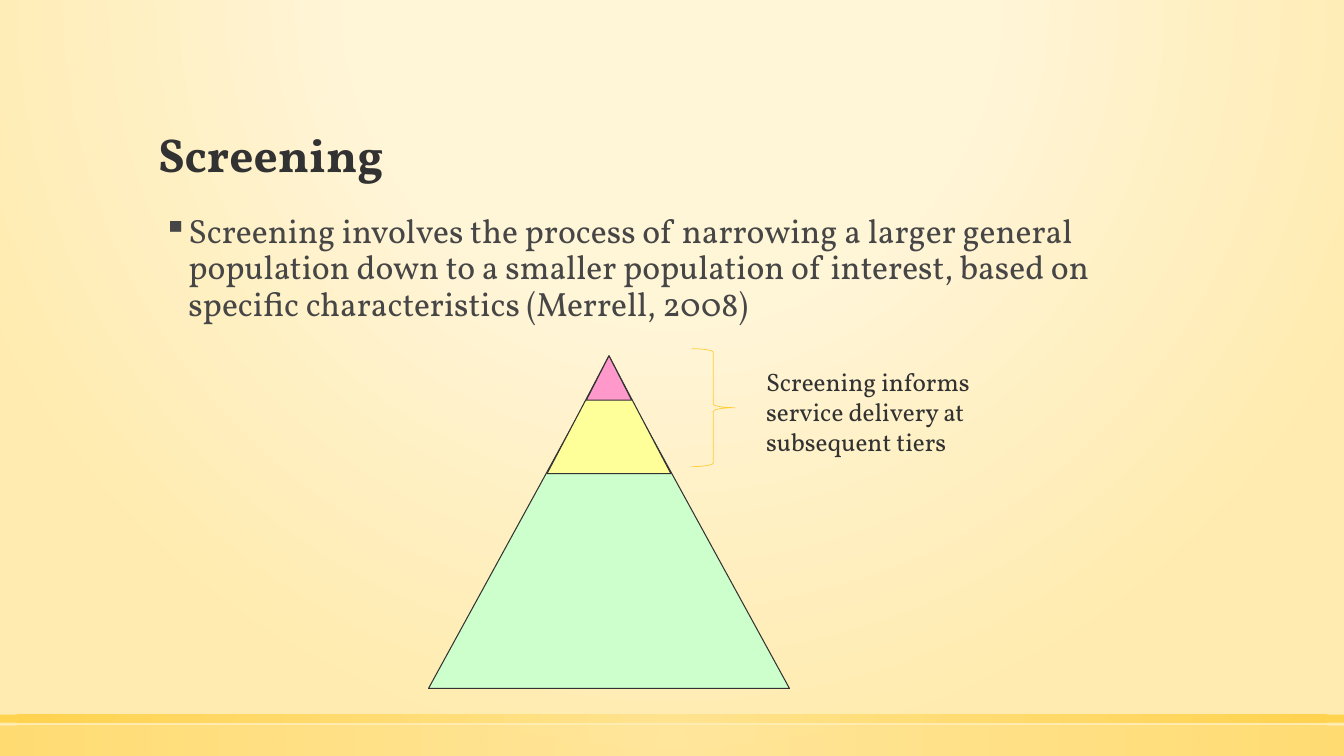
from dataclasses import dataclass, field

from lxml import etree
from pptx import Presentation
from pptx.dml import color as dml
from pptx.enum import shapes, text
from pptx.oxml import ns, parse_xml
from pptx.util import Inches, Pt

COLOURS = {
    "ink": "323232", "body": "464646", "gold": "FFCD36", "light gold": "FFE186",
    "cream": "FFF5D7", "sand": "FFEBAF",
    "green": "CCFFCC", "yellow": "FFFF99", "pink": "FF99CC",
}
FONT = "Vollkorn"
SLIDE_WIDTH, SLIDE_HEIGHT = 13.33, 7.5
PYRAMID_CENTRE = 6.04


@dataclass
class Stop:
    position: int
    colour: str
    alpha: int = 100


@dataclass
class Band:
    top: float
    height: float
    alpha: int


@dataclass
class Tier:
    top: float
    width: float
    height: float
    colour: str


@dataclass
class Label:
    words: str
    left: float
    top: float
    width: float
    height: float
    size: int
    colour: str = "ink"
    bold: bool = False
    bullet: str = ""
    frame_format: dict = field(default_factory=dict)
    para_format: dict = field(default_factory=dict)


BANDS = [Band(7.2, 0.3, 50), Band(7.09, 0.08, 80)]
TIERS = [
    Tier(3.56, 3.58, 3.27, "green"),
    Tier(3.53, 1.23, 1.17, "yellow"),
    Tier(3.53, 0.45, 0.44, "pink"),
]
LABELS = [
    Label("Screening", 1.47, 0.51, 10.4, 1.35, 34, bold=True,
          frame_format={"vertical_anchor": text.MSO_ANCHOR.BOTTOM},
          para_format={"line_spacing": 0.9}),
    Label("Screening involves the process of narrowing a larger general population "
          "down to a smaller population of interest, based on specific "
          "characteristics (Merrell, 2008)",
          1.47, 2.08, 10.4, 4.51, 24, "body", bullet="▪",
          para_format={"line_spacing": 0.9, "space_before": Pt(18)}),
    Label("Screening informs service delivery at subsequent tiers",
          7.5, 3.58, 2.5, 1.01, 18,
          frame_format={"auto_size": text.MSO_AUTO_SIZE.SHAPE_TO_FIT_TEXT}),
]


def rgb(name: str) -> dml.RGBColor:
    return dml.RGBColor.from_string(COLOURS[name])


def apply(target, values: dict) -> None:
    for name, value in values.items():
        setattr(target, name, value)


def paint_radial(fill, holder, stops: list[Stop], top: int, bottom: int) -> None:
    """Fill with a circular gradient whose focus is set by top and bottom percent."""
    fill.solid()
    stop_xml = "".join(
        f'<a:gs pos="{stop.position * 1000}"><a:srgbClr val="{COLOURS[stop.colour]}">'
        f'<a:alpha val="{stop.alpha * 1000}"/></a:srgbClr></a:gs>'
        for stop in stops
    )
    gradient = parse_xml(
        f'<a:gradFill {ns.nsdecls("a")} rotWithShape="1"><a:gsLst>{stop_xml}</a:gsLst>'
        f'<a:path path="circle"><a:fillToRect l="50000" t="{top * 1000}" r="50000" '
        f'b="{bottom * 1000}"/></a:path></a:gradFill>'
    )
    solid = holder.xpath(".//a:solidFill")[0]
    solid.getparent().replace(solid, gradient)


def add_plain_shape(page, kind, left: float, top: float, width: float, height: float):
    shape = page.shapes.add_shape(
        kind, Inches(left), Inches(top), Inches(width), Inches(height))
    shape.shadow.inherit = False
    return shape


def outline(shape, colour: str, points: float) -> None:
    shape.line.color.rgb = rgb(colour)
    shape.line.width = Pt(points)


def draw_band(page, band: Band) -> None:
    bar = add_plain_shape(page, shapes.MSO_SHAPE.RECTANGLE,
                          0, band.top, SLIDE_WIDTH, band.height)
    bar.line.fill.background()
    stops = [Stop(0, "light gold", band.alpha), Stop(100, "gold", band.alpha)]
    paint_radial(bar.fill, bar.element, stops, 50, 50)


def draw_tier(page, tier: Tier) -> None:
    triangle = add_plain_shape(page, shapes.MSO_SHAPE.ISOSCELES_TRIANGLE,
                               PYRAMID_CENTRE - tier.width / 2, tier.top,
                               tier.width, tier.height)
    triangle.fill.solid()
    triangle.fill.fore_color.rgb = rgb(tier.colour)
    outline(triangle, "ink", 0.75)


def draw_brace(page) -> None:
    brace = add_plain_shape(page, shapes.MSO_SHAPE.RIGHT_BRACE, 6.86, 3.46, 0.43, 1.17)
    brace.fill.background()
    outline(brace, "gold", 0.5)


def add_bullet(para, symbol: str) -> None:
    properties = para._p.get_or_add_pPr()
    properties.set("marL", str(Inches(0.3)))
    properties.set("indent", str(Inches(-0.25)))
    etree.SubElement(properties, ns.qn("a:buChar")).set("char", symbol)


def draw_label(page, label: Label) -> None:
    box = page.shapes.add_textbox(Inches(label.left), Inches(label.top),
                                  Inches(label.width), Inches(label.height))
    apply(box.text_frame, {"word_wrap": True, **label.frame_format})
    para = box.text_frame.paragraphs[0]
    apply(para, label.para_format)
    if label.bullet:
        add_bullet(para, label.bullet)
    span = para.add_run()
    span.text = label.words
    apply(span.font, {"name": FONT, "size": Pt(label.size), "bold": label.bold})
    span.font.color.rgb = rgb(label.colour)


def main() -> None:
    deck = Presentation()
    deck.slide_width, deck.slide_height = Inches(SLIDE_WIDTH), Inches(SLIDE_HEIGHT)
    page = deck.slides.add_slide(deck.slide_layouts[6])
    glow = [Stop(0, "cream", 59), Stop(40, "cream", 66), Stop(100, "sand")]
    paint_radial(page.background.fill, page.element, glow, -80, 180)
    for band in BANDS:
        draw_band(page, band)
    for tier in TIERS:
        draw_tier(page, tier)
    draw_brace(page)
    for label in LABELS:
        draw_label(page, label)
    deck.save("out.pptx")


if __name__ == "__main__":
    main()
